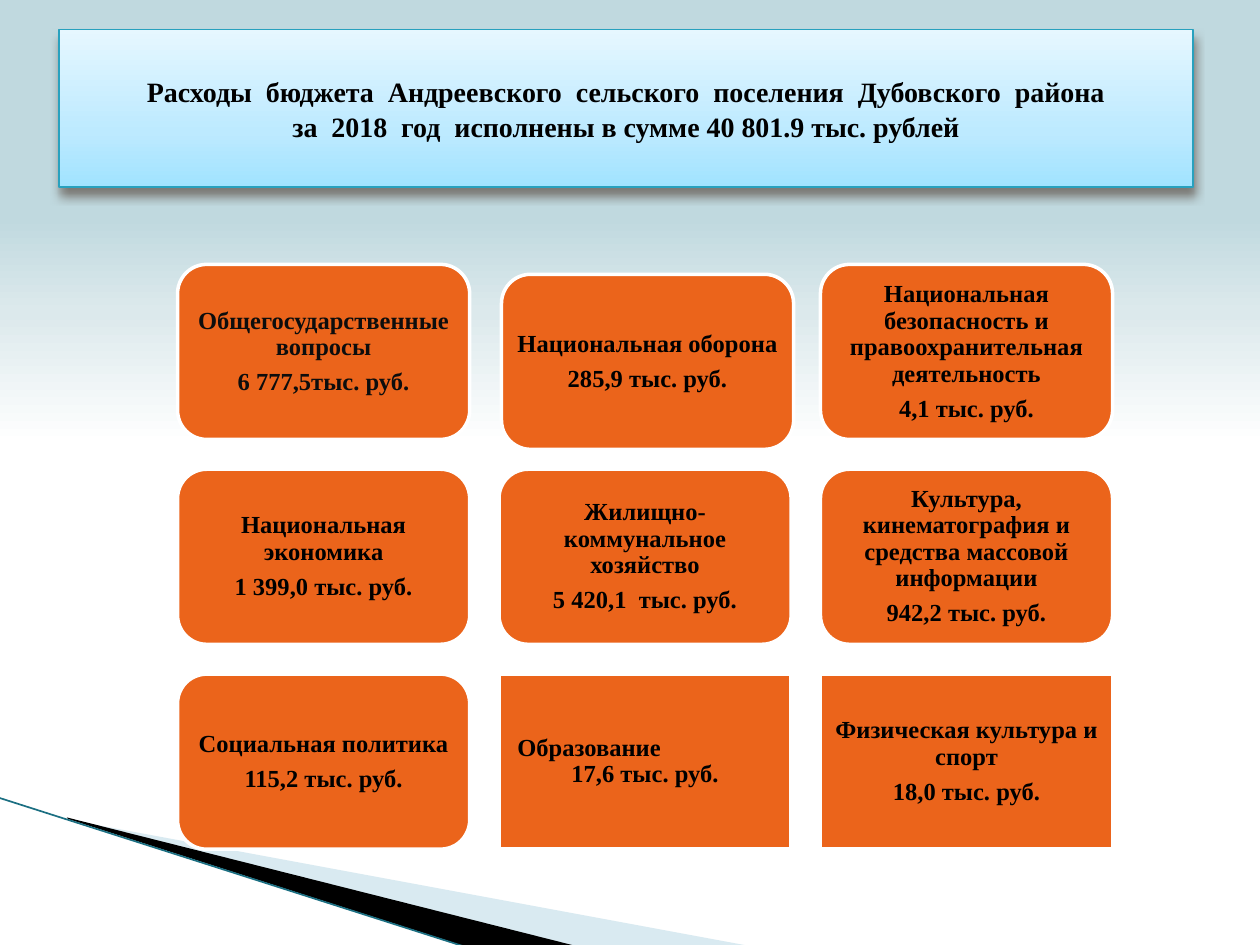
import pptx
import pptx.util
import pptx.oxml
from pptx.dml.color import RGBColor
from pptx.enum.dml import MSO_FILL
from pptx.enum.shapes import MSO_CONNECTOR, MSO_SHAPE
from pptx.enum.text import MSO_ANCHOR, PP_ALIGN
from pptx.oxml.ns import nsdecls, qn
from pptx.util import Cm

BLACK = RGBColor(0x00, 0x00, 0x00)
INK = RGBColor(0x0D, 0x0D, 0x0D)
WHITE = RGBColor(0xFF, 0xFF, 0xFF)
ORANGE = RGBColor(0xEB, 0x64, 0x1B)
TEAL = RGBColor(0x28, 0xA1, 0xBE)
DARK_TEAL = RGBColor(0x1B, 0x6F, 0x82)
PALE_BLUE = RGBColor(0xA0, 0xCB, 0xDC)
MIST = RGBColor(0xC0, 0xD9, 0xDF)
HAZE = RGBColor(0xDC, 0xE9, 0xEC)
SKY = RGBColor(0xA1, 0xE3, 0xFF)
LIGHT_SKY = RGBColor(0xBD, 0xEA, 0xFF)
ICE = RGBColor(0xE6, 0xF7, 0xFF)


def set_text(sp, paragraphs, size=14, color=BLACK, spacing=0.9, gap=4.9, margin=0.15):
    """Write bold centred paragraphs, with gap points between them."""
    tf = sp.text_frame
    tf.word_wrap = True
    tf.vertical_anchor = MSO_ANCHOR.MIDDLE
    tf.margin_left = tf.margin_right = tf.margin_top = tf.margin_bottom = Cm(margin)
    for i, text in enumerate(paragraphs):
        p = tf.paragraphs[0] if i == 0 else tf.add_paragraph()
        p.text = text
        p.alignment = PP_ALIGN.CENTER
        p.line_spacing = spacing
        p.space_before = pptx.util.Pt(gap if i else 0)
        for r in p.runs:
            r.font.name = "Times New Roman"
            r.font.size = pptx.util.Pt(size)
            r.font.bold = True
            r.font.color.rgb = color


def set_gradient(fill, element, angle, stops):
    """Fill with (percent, colour) stops; element is the XML that holds the fill."""
    fill.gradient()
    fill.gradient_angle = angle
    gs_list = element.find(".//" + qn("a:gsLst"))
    for gs in list(gs_list):
        gs_list.remove(gs)
    for percent, color in stops:
        gs_list.append(pptx.oxml.parse_xml(
            f'<a:gs {nsdecls("a")} pos="{percent * 1000}"><a:srgbClr val="{color}"/></a:gs>'))


prs = pptx.Presentation()
prs.slide_width, prs.slide_height = Cm(25.4), Cm(19.05)
s = prs.slides.add_slide(prs.slide_layouts[6])
set_gradient(s.background.fill, s.element, 270,
             [(0, MIST), (23, MIST), (33, HAZE), (47, WHITE), (100, WHITE)])

# Corner wedges
wedges = [
    (PALE_BLUE, 40, [(1.4, 16.53), (15.11, 19.07), (11.58, 19.07), (1.4, 16.51)]),
    (BLACK, 100, [(1.35, 16.48), (11.61, 19.07), (9.45, 19.1), (1.37, 16.51)]),
]
for color, opacity, points in wedges:
    points = [(Cm(x), Cm(y)) for x, y in points]
    builder = s.shapes.build_freeform(*points[0])
    builder.add_line_segments(points[1:])
    sp = builder.convert_to_shape()
    sp.shadow.inherit = False
    sp.line.fill.background()
    sp.fill.solid()
    sp.fill.fore_color.rgb = color
    if opacity < 100:
        sp.element.spPr.find(".//" + qn("a:srgbClr")).append(pptx.oxml.parse_xml(
            f'<a:alpha {nsdecls("a")} val="{opacity * 1000}"/>'))

edge = s.shapes.add_connector(MSO_CONNECTOR.STRAIGHT, Cm(-0.03), Cm(16.08), Cm(9.42), Cm(19.1))
edge.line.color.rgb = DARK_TEAL
edge.line.width = pptx.util.Pt(0.95)
edge.element.spPr.append(pptx.oxml.parse_xml(f'<a:effectLst {nsdecls("a")}/>'))

# Title
title = s.shapes.add_shape(MSO_SHAPE.RECTANGLE, Cm(1.19), Cm(0.59), Cm(22.86), Cm(3.18))
set_gradient(title.fill, title.element, 90, [(0, SKY), (35, LIGHT_SKY), (100, ICE)])
title.line.color.rgb = TEAL
title.line.width = pptx.util.Pt(0.75)
title.shadow.inherit = False
title.element.spPr.find(qn("a:effectLst")).append(pptx.oxml.parse_xml(
    f'<a:outerShdw {nsdecls("a")} blurRad="76200" dist="50800" dir="5400000" rotWithShape="0">'
    '<a:srgbClr val="4E3B30"><a:alpha val="60000"/></a:srgbClr></a:outerShdw>'))
set_text(title, ["Расходы  бюджета  Андреевского  сельского  поселения  Дубовского  района\v"
                 "за  2018  год  исполнены в сумме 40 801.9 тыс. рублей"],
         size=16, spacing=1.05)

# Grid of spending items
ROUNDED, SQUARE = MSO_SHAPE.FLOWCHART_ALTERNATE_PROCESS, MSO_SHAPE.RECTANGLE
items = [
    (ROUNDED, "Общегосударственные вопросы", "6 777,5тыс. руб."),
    (ROUNDED, "Национальная оборона", "285,9 тыс. руб."),
    (ROUNDED, "Национальная безопасность и правоохранительная деятельность", "4,1 тыс. руб."),
    (ROUNDED, "Национальная экономика", "1 399,0 тыс. руб."),
    (ROUNDED, "Жилищно-коммунальное хозяйство", "5 420,1  тыс. руб."),
    (ROUNDED, "Культура, кинематография и средства массовой информации", "942,2 тыс. руб."),
    (ROUNDED, "Социальная политика", "115,2 тыс. руб."),
    (SQUARE, "Образование", "17,6 тыс. руб."),
    (SQUARE, "Физическая культура и спорт", "18,0 тыс. руб."),
]
DEFENCE, EDUCATION = 1, 7
for i, (kind, name, amount) in enumerate(items):
    row, col = divmod(i, 3)
    left, top = 3.58 + 6.48 * col, 5.33 + 4.13 * row
    if i == DEFENCE:
        left, top = left + 0.05, top + 0.2
    sp = s.shapes.add_shape(kind, Cm(left), Cm(top), Cm(5.89), Cm(3.53))
    sp.shadow.inherit = False
    sp.fill.solid()
    sp.fill.fore_color.rgb = ORANGE
    sp.line.color.rgb = WHITE
    sp.line.width = pptx.util.Pt(2)
    set_text(sp, [name, amount], color=BLACK if i else INK, gap=0 if i == EDUCATION else 4.9)
    if i == EDUCATION:
        p = sp.text_frame.paragraphs[0]
        p.alignment = PP_ALIGN.LEFT
        p._p.get_or_add_pPr().set("marL", str(Cm(0.22)))

prs.save("out.pptx")
